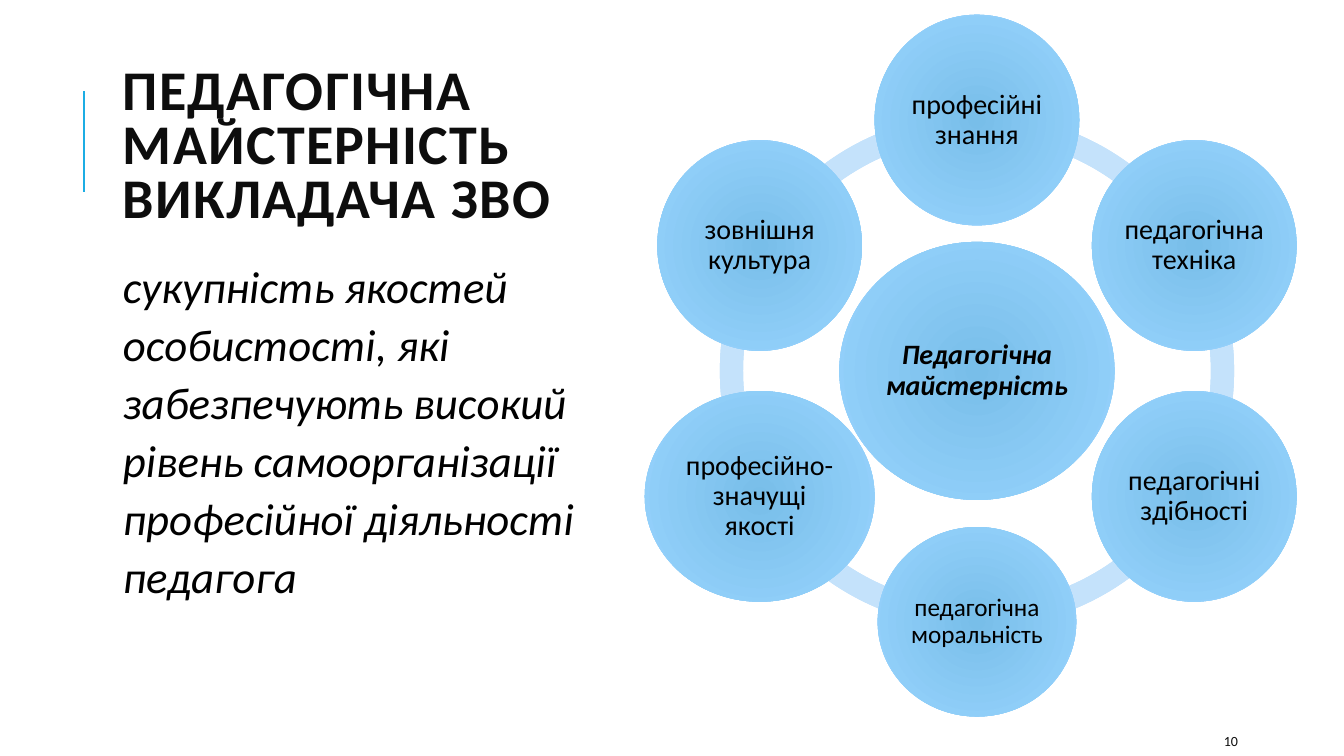
import math
from itertools import pairwise

from lxml import etree
from pptx import Presentation
from pptx import util as u
from pptx.dml.color import RGBColor
from pptx.enum import shapes, text
from pptx.oxml import ns

FONT = "Calibri"
BLACK, INK, ACCENT = "000000", "0D0D0D", "1CADE4"
RING_COLORS = ("BDDBF2", "C8E6FF")
CIRCLE_COLORS = ("78BEE9", "9AD5FF")

# label, width, height, text size; clockwise from the top
QUALITIES = [
    ("професійні знання", 2.03, 2.09, 20),
    ("педагогічна техніка", 2.03, 2.09, 20),
    ("педагогічні здібності", 2.03, 2.09, 20),
    ("педагогічна моральність", 1.97, 1.88, 18),
    ("професійно-значущі якості", 2.28, 2.09, 20),
    ("зовнішня культура", 2.03, 2.09, 20),
]


def color(value):
    return RGBColor.from_string(value)


def write(shape, content, size, ink=BLACK, bold=False, italic=False, inset=None,
          anchor=text.MSO_ANCHOR.MIDDLE, align=text.PP_ALIGN.LEFT, spacing=1.0):
    """Put one formatted paragraph in a shape and return the paragraph."""
    tf = shape.text_frame
    tf.text = content
    tf.word_wrap = True
    tf.vertical_anchor = anchor
    if inset is not None:
        tf.margin_left = tf.margin_right = u.Inches(inset)
        tf.margin_top = tf.margin_bottom = u.Inches(inset)
    p = tf.paragraphs[0]
    p.alignment, p.line_spacing = align, spacing
    font = p.runs[0].font
    font.name, font.size, font.bold, font.italic = FONT, u.Pt(size), bold, italic
    font.color.rgb = color(ink)
    return p


def add_text(s, box, content, size, **style):
    return write(s.shapes.add_textbox(*map(u.Inches, box)), content, size, **style)


def add_radial_shape(s, kind, cx, cy, w, h, stops):
    """Add a borderless shape centred on (cx, cy) with a radial gradient."""
    sp = s.shapes.add_shape(kind, *map(u.Inches, (cx - w / 2, cy - h / 2, w, h)))
    sp.shadow.inherit = False
    sp.line.fill.background()
    sp.fill.gradient()
    for stop, value in zip(sp.fill.gradient_stops, stops):
        stop.color.rgb = color(value)
    grad = sp._element.spPr.find(ns.qn("a:gradFill"))
    grad.remove(grad.find(ns.qn("a:lin")))
    radial = etree.SubElement(grad, ns.qn("a:path"), path="circle")
    etree.SubElement(radial, ns.qn("a:fillToRect"), dict.fromkeys("ltrb", "100000"))
    return sp


def add_circle(s, cx, cy, w, h, label, size, **style):
    sp = add_radial_shape(s, shapes.MSO_SHAPE.OVAL, cx, cy, w, h, CIRCLE_COLORS)
    write(sp, label, size, inset=0.01, align=text.PP_ALIGN.CENTER, spacing=0.9, **style)


def add_ring(s, cx, cy, diameter):
    for start, end in pairwise([18, 54, 90, 126, 162, 198, 18]):
        arc = add_radial_shape(s, shapes.MSO_SHAPE.BLOCK_ARC, cx, cy,
                               diameter, diameter, RING_COLORS)
        # an angle is stored in 60000ths of a degree, an adjustment in 100000ths
        for i, value in enumerate((start * 0.6, end * 0.6, 0.045)):
            arc.adjustments[i] = value


def add_mastery_wheel(s, left, top, diameter):
    cx, cy = left + diameter / 2, top + diameter / 2
    orbit = diameter * 0.488
    add_ring(s, cx, cy, diameter)
    add_circle(s, cx, cy, 2.73, 2.56, "Педагогічна майстерність", 20,
               bold=True, italic=True)
    for i, (label, w, h, size) in enumerate(QUALITIES):
        angle = math.tau * i / len(QUALITIES)
        add_circle(s, cx + orbit * math.sin(angle), cy - orbit * math.cos(angle),
                   w, h, label, size)


def add_definition(s, left, top, width):
    """Add the accent line, the heading and the definition below it."""
    rule_x = left - 0.29
    rule = s.shapes.add_connector(
        shapes.MSO_CONNECTOR.STRAIGHT,
        *map(u.Inches, (rule_x, top + 1.38, rule_x, top + 0.38)))
    rule.line.color.rgb = color(ACCENT)
    rule.line.width = u.Pt(1.5)
    etree.SubElement(rule._element.spPr, ns.qn("a:effectLst"))

    p = add_text(s, (left, top, width, 1.9), "ПЕДАГОГІЧНА МАЙСТЕРНІСТЬ ВИКЛАДАЧА ЗВО",
                 40, ink=INK, bold=True, spacing=0.8)
    p.runs[0].font._element.set("spc", "100")
    p = add_text(s, (left, top + 1.95, width, 4.11),
                 "сукупність якостей особистості, які забезпечують високий рівень "
                 "самоорганізації професійної діяльності педагога",
                 32, italic=True, anchor=text.MSO_ANCHOR.TOP, spacing=1.08)
    p.space_before, p.space_after = u.Pt(6), u.Pt(2)


def main():
    prs = Presentation()
    prs.slide_width, prs.slide_height = u.Inches(13.33), u.Inches(7.5)
    s = prs.slides.add_slide(prs.slide_layouts[6])
    add_definition(s, 1.12, 0.52, 4.8)
    add_text(s, (12.04, 7.2, 1.06, 0.3), "10", 10, ink=INK)
    add_mastery_wheel(s, 7.14, 1.13, 5.1)
    prs.save("out.pptx")


if __name__ == "__main__":
    main()
